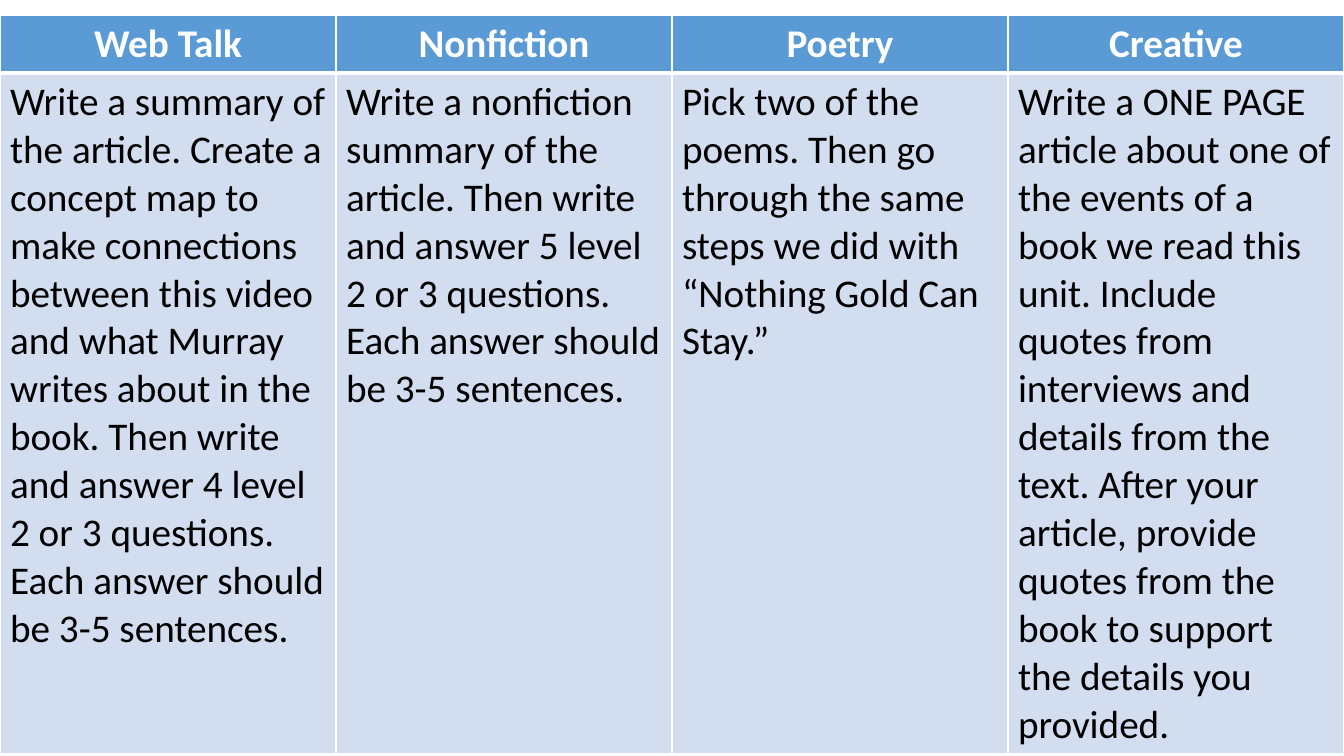
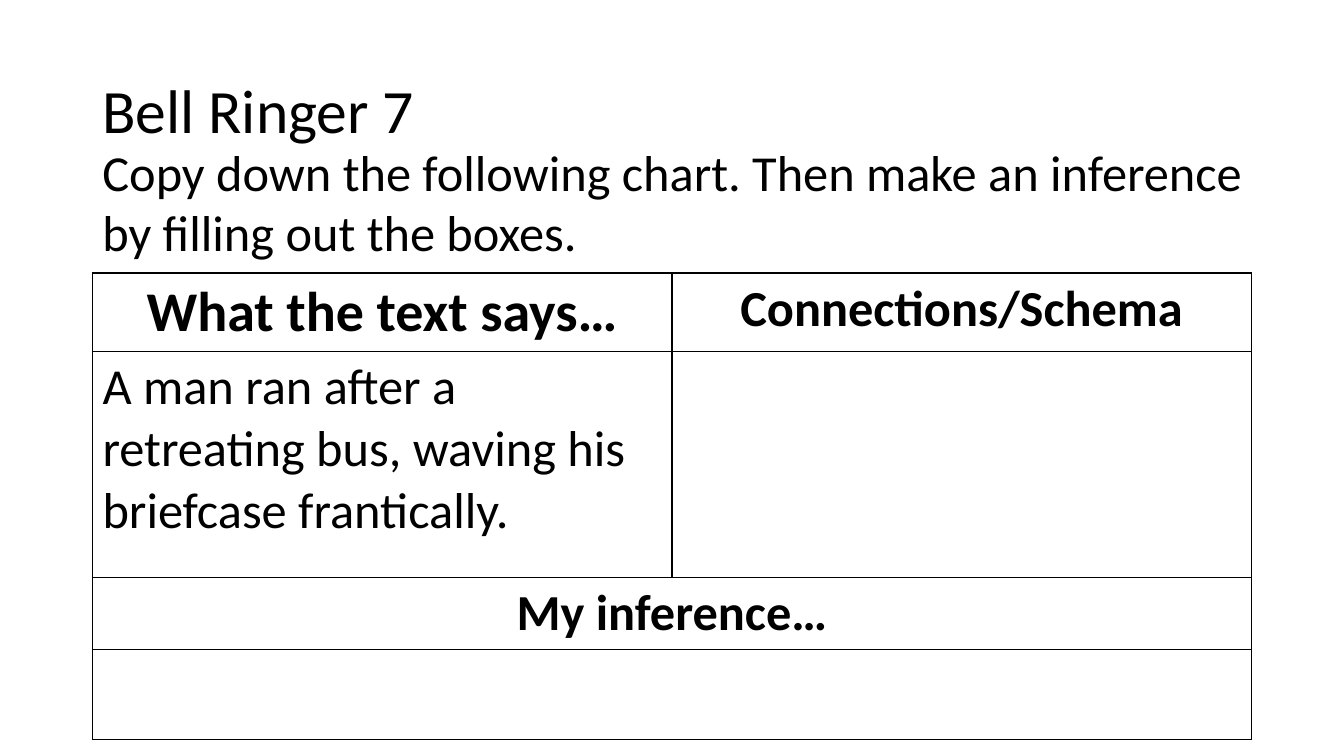
from lxml import etree
from pptx import Presentation
from pptx.dml.color import RGBColor
from pptx.enum import text
from pptx.oxml import ns
from pptx.util import Cm, Pt

BLACK, WHITE, BLUE, PALE = "000000", "FFFFFF", "5B9BD5", "D2DEEF"


def color(value):
    return RGBColor.from_string(value)


class Lesson:
    """Style of the lesson deck and its current slide."""

    font = "Calibri"

    def __init__(self):
        self.deck = Presentation()
        self.deck.slide_width, self.deck.slide_height = Cm(33.87), Cm(19.05)

    def new_page(self):
        self.page = self.deck.slides.add_slide(self.deck.slide_layouts[6])

    def set_words(self, frame, words, size, ink=BLACK, bold=False, centered=False):
        frame.text = words
        para = frame.paragraphs[0]
        para.alignment = text.PP_ALIGN.CENTER if centered else text.PP_ALIGN.LEFT
        for span in para.runs:
            span.font.name, span.font.size = self.font, Pt(size)
            span.font.bold, span.font.color.rgb = bold, color(ink)
        return para

    def textbox(self, words, size, left, top, width, height, anchor=text.MSO_ANCHOR.TOP):
        box = self.page.shapes.add_textbox(Cm(left), Cm(top), Cm(width), Cm(height))
        box.text_frame.word_wrap = True
        box.text_frame.vertical_anchor = anchor
        return self.set_words(box.text_frame, words, size)

    def grid(self, left, top, width, heights, columns):
        frame = self.page.shapes.add_table(
            len(heights), columns, Cm(left), Cm(top), Cm(width), Cm(sum(heights)))
        table = frame.table
        table.first_row = table.horz_banding = False
        for row, height in zip(table.rows, heights):
            row.height = Cm(height)
        return table

    def borders(self, cell, ink, **widths):
        properties = cell._tc.get_or_add_tcPr()
        for side in "LRTB":
            line = etree.SubElement(properties, ns.qn(f"a:ln{side}"),
                                    w=str(Pt(widths.get(side, 1))))
            fill = etree.SubElement(line, ns.qn("a:solidFill"))
            etree.SubElement(fill, ns.qn("a:srgbClr"), val=ink)

    def fill(self, cell, shade):
        cell.fill.solid()
        cell.fill.fore_color.rgb = color(shade)


def assignments(lesson):
    choices = {
        "Web Talk": "Write a summary of the article. Create a concept map to make "
                    "connections between this video and what Murray writes about in the "
                    "book. Then write and answer 4 level 2 or 3 questions. Each answer "
                    "should be 3-5 sentences.",
        "Nonfiction": "Write a nonfiction summary of the article. Then write and answer "
                      "5 level 2 or 3 questions. Each answer should be 3-5 sentences.",
        "Poetry": "Pick two of the poems. Then go through the same steps we did with "
                  "“Nothing Gold Can Stay.”",
        "Creative": "Write a ONE PAGE article about one of the events of a book we read "
                    "this unit. Include quotes from interviews and details from the text. "
                    "After your article, provide quotes from the book to support the "
                    "details you provided.",
    }
    lesson.new_page()
    table = lesson.grid(0, 0.38, 33.87, [1.45, 17.15], len(choices))
    for column, (heading, task) in enumerate(choices.items()):
        header, body = table.cell(0, column), table.cell(1, column)
        lesson.borders(header, WHITE, B=3)
        lesson.borders(body, WHITE, T=3)
        lesson.fill(header, BLUE)
        lesson.fill(body, PALE)
        lesson.set_words(header.text_frame, heading, 28, WHITE, bold=True, centered=True)
        lesson.set_words(body.text_frame, task, 28)


def bell_ringer(lesson):
    lesson.new_page()
    left, width = 2.33, 29.21
    title = lesson.textbox("Bell Ringer 7", 44, left, 1.01, width, 3.68,
                           text.MSO_ANCHOR.MIDDLE)
    title.line_spacing = 0.9
    table = lesson.grid(left, 6.88, width, [1.98, 5.7, 1.8, 2.27], 2)
    for cell in table.iter_cells():
        lesson.borders(cell, BLACK)
        cell.fill.background()
    for row in (2, 3):
        table.cell(row, 0).merge(table.cell(row, 1))
    headings = [(0, 0, "What the text says…", 40), (0, 1, "Connections/Schema", 36),
                (2, 0, "My inference…", 36)]
    for row, column, words, size in headings:
        lesson.set_words(table.cell(row, column).text_frame, words, size,
                         bold=True, centered=True)
    lesson.set_words(table.cell(1, 0).text_frame,
                     "A man ran after a retreating bus, waving his briefcase frantically.",
                     36)
    lesson.textbox("Copy down the following chart. Then make an inference by filling "
                   "out the boxes.", 36, left, 3.43, 29.7, 3.33)


def main():
    lesson = Lesson()
    assignments(lesson)
    bell_ringer(lesson)
    lesson.deck.save("out.pptx")


if __name__ == "__main__":
    main()
